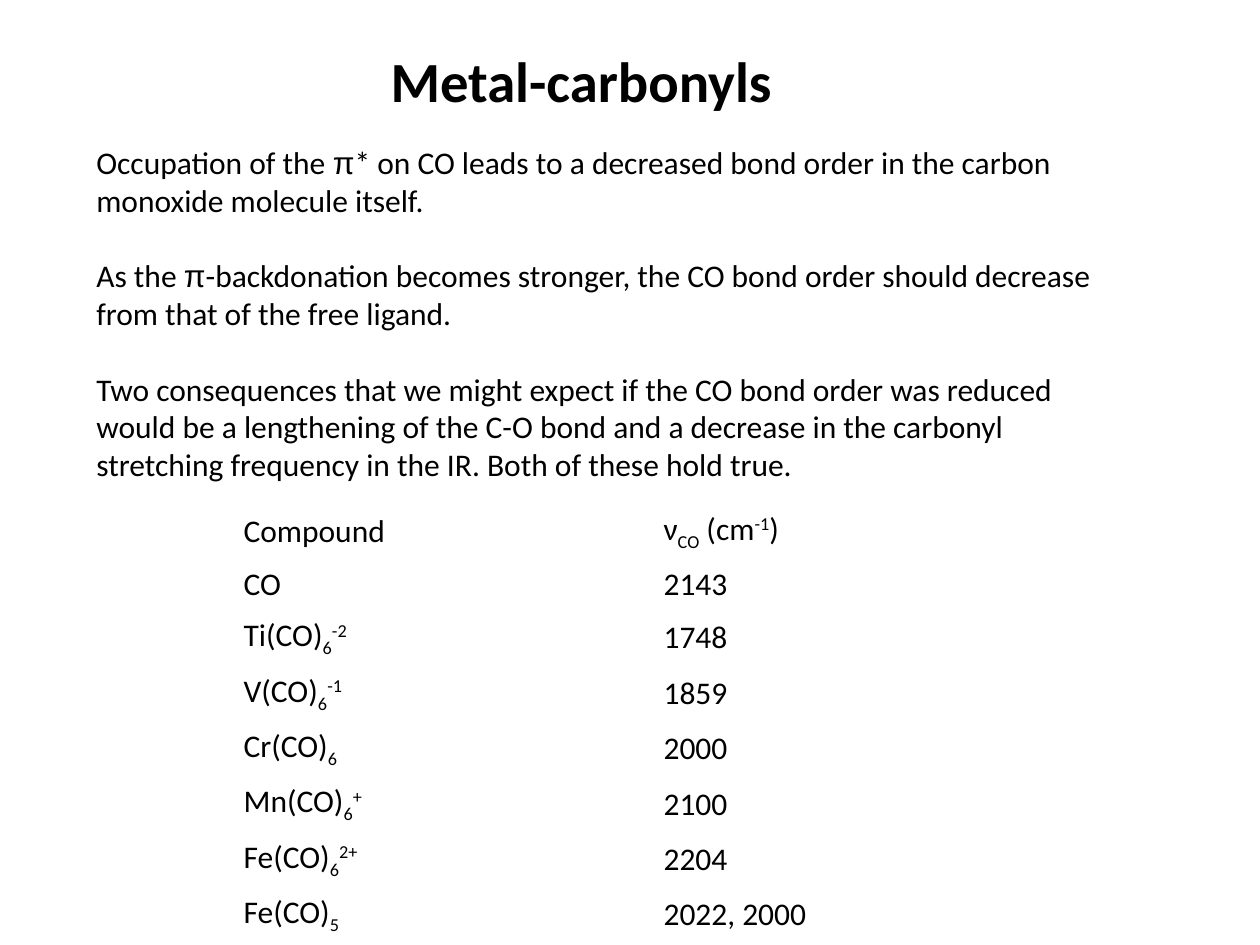
"""Build the metal-carbonyls slide with its text and frequency table."""
from pptx import Presentation
from pptx.dml.color import RGBColor
from pptx.enum.text import MSO_ANCHOR, MSO_AUTO_SIZE, PP_ALIGN
from pptx.util import Pt

COLORS = {"text": "000000"}
BASELINES = {"_": "-25000", "^": "30000"}

PARAGRAPHS = [
    "Occupation of the |π|* on CO leads to a decreased bond order in the "
    "carbon monoxide molecule itself.",
    "As the |π|-backdonation becomes stronger, the CO bond order should "
    "decrease from that of the free ligand.",
    "Two consequences that we might expect if the CO bond order was reduced "
    "would be a lengthening of the C-O bond and a decrease in the carbonyl "
    "stretching frequency in the IR. Both of these hold true.",
]

FREQUENCIES = [
    ("Compound", "ν|_CO| (cm|^-1|)"),
    ("CO", "2143"),
    ("Ti(CO)|_6|^-2", "1748"),
    ("V(CO)|_6|^-1", "1859"),
    ("Cr(CO)|_6", "2000"),
    ("Mn(CO)|_6|^+", "2100"),
    ("Fe(CO)|_6|^2+", "2204"),
    ("Fe(CO)|_5", "2022, 2000"),
]


def write(p, text, size=18, bold=False, align=PP_ALIGN.LEFT, before=0):
    """Fill a paragraph; | splits runs, and a leading _ or ^ lowers or raises one."""
    p.alignment = align
    p.space_before = Pt(before)
    for part in text.split("|"):
        baseline = BASELINES.get(part[0])
        r = p.add_run()
        r.text = part[1:] if baseline else part
        r.font.name = "Arial" if part == "π" else "Calibri"
        r.font.size = Pt(size)
        r.font.bold = bold
        r.font.color.rgb = RGBColor.from_string(COLORS["text"])
        if baseline:
            r._r.get_or_add_rPr().set("baseline", baseline)


def add_title(s, text):
    """Place the slide title."""
    sp = s.shapes.title
    sp.left, sp.top, sp.width, sp.height = Pt(126), Pt(18), Pt(420), Pt(90)
    tf = sp.text_frame
    tf.auto_size = MSO_AUTO_SIZE.NONE
    tf.vertical_anchor = MSO_ANCHOR.TOP
    tf.margin_top, tf.margin_right = Pt(8), Pt(15)
    write(tf.paragraphs[0], text, size=32.4, bold=True, align=PP_ALIGN.CENTER)


def add_body(s, paragraphs):
    """Add the explanatory paragraphs, one line apart."""
    tf = s.shapes.add_textbox(Pt(48), Pt(78), Pt(606), Pt(204)).text_frame
    tf.word_wrap = True
    for i, text in enumerate(paragraphs):
        p = tf.add_paragraph() if i else tf.paragraphs[0]
        write(p, text, before=21.6 if i else 0)


def add_frequency_table(s, rows):
    """Add the plain table of compounds and stretching frequencies."""
    frame = s.shapes.add_table(len(rows), 2, Pt(132), Pt(288), Pt(480), Pt(230.4))
    table = frame.table
    table.first_row = table.horz_banding = False
    for i, row in enumerate(rows):
        for j, text in enumerate(row):
            cell = table.cell(i, j)
            cell.fill.background()
            cell.vertical_anchor = MSO_ANCHOR.MIDDLE
            write(cell.text_frame.paragraphs[0], text)


def main():
    """Build and save the slide."""
    prs = Presentation()
    prs.slide_width, prs.slide_height = Pt(720), Pt(540)
    s = prs.slides.add_slide(prs.slide_layouts[5])
    add_frequency_table(s, FREQUENCIES)
    add_body(s, PARAGRAPHS)
    add_title(s, "Metal-carbonyls")
    prs.save("out.pptx")


if __name__ == "__main__":
    main()
